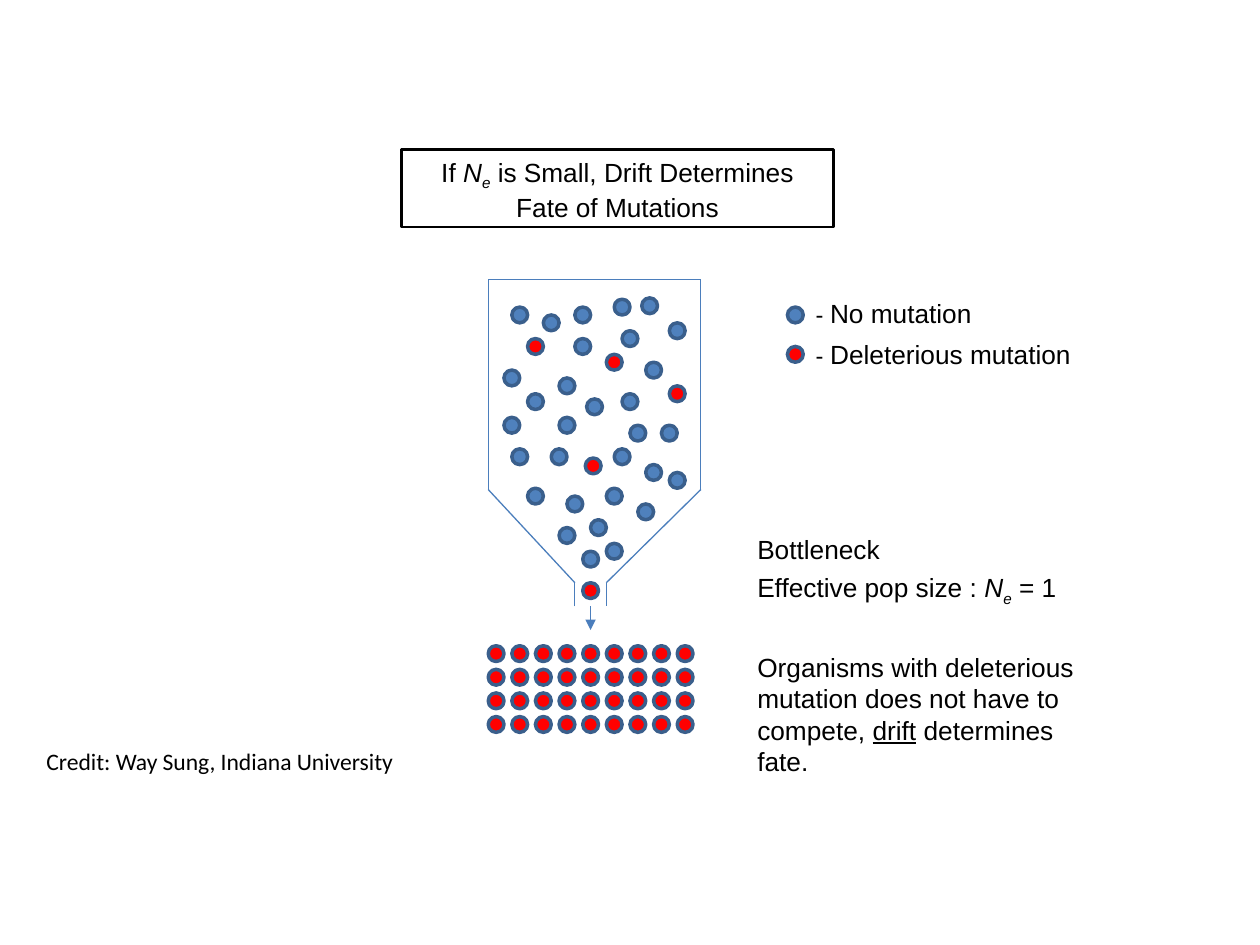
from itertools import pairwise, product

from lxml import etree
from pptx import Presentation
from pptx.dml.color import RGBColor
from pptx.enum.shapes import MSO_CONNECTOR, MSO_SHAPE
from pptx.enum.text import MSO_ANCHOR, PP_ALIGN
from pptx.oxml.ns import qn
from pptx.util import Pt

PX = 9525
BALL = 12
OVAL = MSO_SHAPE.OVAL
RECTANGLE = MSO_SHAPE.RECTANGLE
STRAIGHT = MSO_CONNECTOR.STRAIGHT
TOP = MSO_ANCHOR.TOP
LEFT = PP_ALIGN.LEFT
CENTER = PP_ALIGN.CENTER

BLACK = RGBColor(0x00, 0x00, 0x00)
BLUE = RGBColor(0x4F, 0x81, 0xBD)
RED = RGBColor(0xFF, 0x00, 0x00)
RIM = RGBColor(0x3A, 0x5F, 0x8C)
GLASS = RGBColor(0x4B, 0x7E, 0xBC)

FLASK_OUTLINE = [(66, 249), (66, 231), (0, 160), (0, 0),
                 (162, 0), (162, 160), (90, 231), (90, 249)]
HEALTHY = [
    (18, 21), (54, 75), (30, 87), (48, 129), (66, 21), (102, 39), (66, 45),
    (138, 33), (117, 14), (75, 91), (54, 105), (42, 27), (120, 63), (102, 87),
    (108, 111), (60, 165), (96, 129), (120, 141), (90, 159), (96, 15),
    (78, 183), (90, 201), (30, 159), (18, 129), (132, 111), (54, 189),
    (114, 171), (12, 105), (12, 69), (138, 147), (72, 207),
]
DELETERIOUS = [(30, 45), (90, 57), (74, 136), (138, 81), (72, 231)]


def add_ball(page, left, top, color):
    ball = page.shapes.add_shape(OVAL, left * PX, top * PX, BALL * PX, BALL * PX)
    ball.shadow.inherit = False
    ball.fill.solid()
    ball.fill.fore_color.rgb = color
    ball.line.color.rgb = RIM
    ball.line.width = Pt(2)


def add_line(page, start, end, arrow=False):
    line = page.shapes.add_connector(
        STRAIGHT, *(value * PX for value in (*start, *end)))
    line.line.color.rgb = GLASS
    line.line.width = Pt(0.75)
    if arrow:
        outline = line.line._get_or_add_ln()
        etree.SubElement(outline, qn("a:tailEnd"), type="triangle")
    etree.SubElement(line._element.spPr, qn("a:effectLst"))


def add_span(para, text, size=15, font="Arial", style=""):
    span = para.add_run()
    span.text = text
    span.font.size = Pt(size)
    span.font.name = font
    span.font.color.rgb = BLACK
    if style in ("italic", "subscript"):
        span.font.italic = True
    if style == "subscript":
        span._r.get_or_add_rPr().set("baseline", "-25000")
    if style == "underline":
        span.font.underline = True


def add_size_symbol(para):
    add_span(para, "N", style="italic")
    add_span(para, "e", style="subscript")


def add_text(page, left, top, width, height, wrap=True):
    box = page.shapes.add_textbox(left * PX, top * PX, width * PX, height * PX)
    box.text_frame.word_wrap = wrap
    return box.text_frame


def draw_title(page, left, top, width, height):
    box = page.shapes.add_shape(
        RECTANGLE, left * PX, top * PX, width * PX, height * PX)
    box.shadow.inherit = False
    box.fill.background()
    box.line.color.rgb = BLACK
    box.line.width = Pt(1.5)
    frame = box.text_frame
    frame.word_wrap = True
    frame.vertical_anchor = TOP
    para = frame.paragraphs[0]
    para.alignment = CENTER
    add_span(para, "If ")
    add_size_symbol(para)
    add_span(para, " is Small, Drift Determines Fate of Mutations")


def draw_flask(page, left, top):
    corners = [(left + x, top + y) for x, y in FLASK_OUTLINE]
    for start, end in pairwise(corners):
        add_line(page, start, end)
    for places, color in ((HEALTHY, BLUE), (DELETERIOUS, RED)):
        for x, y in places:
            add_ball(page, left + x, top + y, color)
    add_line(page, (left + 78, top + 249), (left + 78, top + 267), arrow=True)


def draw_offspring(page, left, top, rows=4, columns=9, pitch=18):
    for row, column in product(range(rows), range(columns)):
        add_ball(page, left + column * pitch, top + row * pitch, RED)


def draw_legend(page, left, top):
    entries = [("No mutation", 139, BLUE), ("Deleterious mutation", 216, RED)]
    for index, (label, width, color) in enumerate(entries):
        add_ball(page, left, top + index * 30, color)
        frame = add_text(page, left + BALL, top - 12 + index * 31, width, 34, wrap=False)
        para = frame.paragraphs[0]
        para.alignment = LEFT
        add_span(para, "- ", size=13.5)
        add_span(para, label)


def draw_explanation(page, left, top, width, height):
    frame = add_text(page, left, top, width, height)
    frame.margin_left = frame.margin_right = 7 * PX
    frame.margin_top = frame.margin_bottom = 4 * PX
    add_span(frame.paragraphs[0], "Bottleneck")

    population = frame.add_paragraph()
    population.space_before = Pt(4)
    add_span(population, "Effective pop size : ")
    add_size_symbol(population)
    add_span(population, " = 1")

    outcome = frame.add_paragraph()
    outcome.space_before = Pt(25)
    add_span(outcome, "Organisms with deleterious mutation does not have to compete, ")
    add_span(outcome, "drift", style="underline")
    add_span(outcome, " determines fate.")


def draw_credit(page, left, top, width, height):
    frame = add_text(page, left, top, width, height, wrap=False)
    add_span(frame.paragraphs[0], "Credit: Way Sung, Indiana University",
             size=13.5, font="Calibri")


def main():
    deck = Presentation()
    deck.slide_width = 960 * PX
    deck.slide_height = 720 * PX
    page = deck.slides.add_slide(deck.slide_layouts[6])
    draw_flask(page, 372, 213)
    draw_offspring(page, 372, 492)
    draw_legend(page, 600, 234)
    draw_explanation(page, 570, 402, 264, 72)
    draw_title(page, 306, 114, 329, 59)
    draw_credit(page, 26, 564, 288, 32)
    deck.save("out.pptx")


if __name__ == "__main__":
    main()
